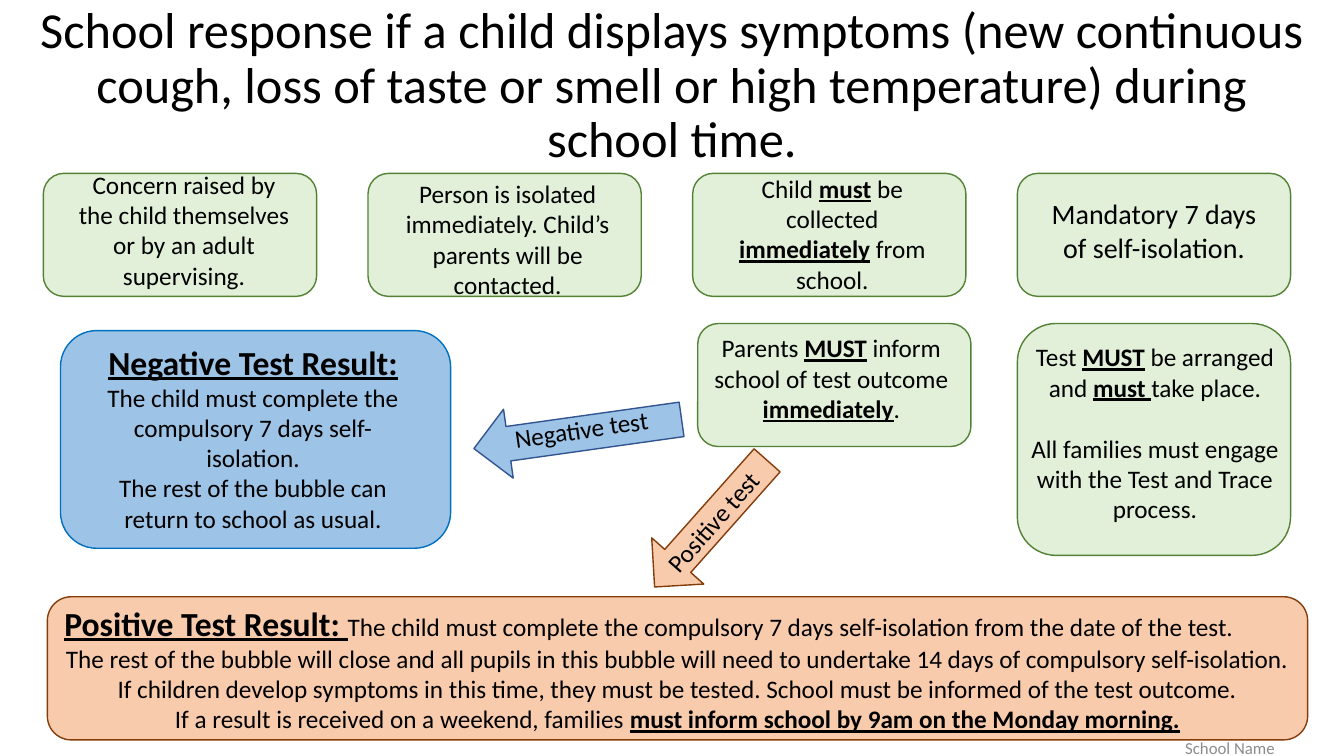
from pptx import Presentation
from pptx.dml.color import RGBColor
from pptx.enum import shapes as sh, text as tx
from pptx.util import Inches, Pt

BLACK = RGBColor(0, 0, 0)
GREY = RGBColor(0x8C, 0x8C, 0x8C)
MINT = RGBColor(0xE2, 0xF0, 0xD9)
GREEN = RGBColor(0x54, 0x82, 0x35)
SKY = RGBColor(0x9D, 0xC3, 0xE6)
BLUE = RGBColor(0x00, 0x70, 0xC0)
NAVY = RGBColor(0x32, 0x54, 0x91)
PEACH = RGBColor(0xF8, 0xCB, 0xAD)
BROWN = RGBColor(0x84, 0x3C, 0x0B)

ROUND = sh.MSO_SHAPE.ROUNDED_RECTANGLE
ARROW = sh.MSO_SHAPE.RIGHT_ARROW
LEFT, MID = tx.PP_ALIGN.LEFT, tx.PP_ALIGN.CENTER
COLS = [0.43 + 3.22 * i for i in range(4)]

STEPS = [
    (0.68, 1.63, 18, "Concern raised by the child themselves or by an adult supervising."),
    (3.89, 1.72, 18, "Person is isolated immediately. Child’s parents will be contacted."),
    (7.11, 1.67, 18, "Child *must* be collected *immediately* from school."),
    (10.3, 1.9, 20, "Mandatory 7 days of self-isolation."),
]


def add_shape(slide, kind, box, fill, line, turn=0):
    shape = slide.shapes.add_shape(kind, *map(Inches, box))
    shape.shadow.inherit = False
    shape.fill.solid()
    shape.fill.fore_color.rgb = fill
    shape.line.color.rgb = line
    shape.line.width = Pt(1)
    shape.rotation = turn
    return shape


def add_para(frame, words, size=18, align=MID, color=BLACK, first=False):
    para = frame.paragraphs[0] if first else frame.add_paragraph()
    para.alignment = align
    para.font.name = "Calibri"
    para.font.size = Pt(size)
    para.font.color.rgb = color
    for i, part in enumerate(words.split("*")):
        if part:
            run = para.add_run()
            run.text = part
            if i % 2:
                run.font.bold = run.font.underline = True
    return para


def add_text(slide, box, words, size=18, align=MID, color=BLACK,
             anchor=tx.MSO_ANCHOR.TOP, turn=0):
    label = slide.shapes.add_textbox(*map(Inches, box))
    label.rotation = turn
    frame = label.text_frame
    frame.word_wrap = True
    frame.vertical_anchor = anchor
    add_para(frame, words, size, align, color, True)
    return frame


def add_steps(slide):
    for col, (left, top, size, words) in zip(COLS, STEPS):
        add_shape(slide, ROUND, (col, 1.72, 2.71, 1.22), MINT, GREEN)
        add_text(slide, (left, top, 2.29, 1.31), words, size)


def add_tests(slide):
    add_shape(slide, ROUND, (COLS[3], 3.21, 2.71, 2.3), MINT, GREEN)
    frame = add_text(slide, (10.1, 3.34, 2.71, 1.92),
                     "Test *MUST* be arranged and *must *take place.")
    para = add_para(frame, "All families must engage with the Test and Trace process.")
    para.space_before = Pt(22)
    add_shape(slide, ROUND, (6.92, 3.21, 2.71, 1.22), MINT, GREEN)
    add_text(slide, (6.89, 3.25, 2.71, 1.01),
             "Parents *MUST* inform school of test outcome *immediately*.")


def add_arrows(slide):
    add_shape(slide, ARROW, (4.69, 3.96, 2.08, 0.69), SKY, NAVY, 172)
    add_text(slide, (5, 4.04, 1.76, 0.4), "Negative test", align=LEFT, turn=351.6)
    add_shape(slide, ARROW, (6.21, 4.85, 1.68, 0.69), PEACH, BROWN, 131.6)
    add_text(slide, (6.3, 4.85, 1.76, 0.4), "Positive test", align=LEFT, turn=311.5)


def add_results(slide):
    add_shape(slide, ROUND, (0.6, 3.28, 3.87, 2.16), SKY, BLUE)
    frame = add_text(slide, (0.81, 3.34, 3.4, 2.02), "*Negative Test Result:*", 24)
    add_para(frame, "The child must complete the compulsory 7 days self-isolation.")
    add_para(frame, "The rest of the bubble can return to school as usual.")

    panel = add_shape(slide, ROUND, (0.47, 5.92, 12.5, 1.42), PEACH, BROWN)
    frame = panel.text_frame
    frame.word_wrap = True
    frame.vertical_anchor = tx.MSO_ANCHOR.MIDDLE
    head = add_para(frame, "*Positive Test Result: *The child must complete the compulsory "
                    "7 days self-isolation from the date of the test.", align=LEFT, first=True)
    head.runs[0].font.size = Pt(24)
    add_para(frame, "The rest of the bubble will close and all pupils in this bubble will "
             "need to undertake 14 days of compulsory self-isolation. If children develop "
             "symptoms in this time, they must be tested. School must be informed of the "
             "test outcome.")
    add_para(frame, "If a result is received on a weekend, families "
             "*must inform school by 9am on the Monday morning.*")


def main():
    deck = Presentation()
    deck.slide_width, deck.slide_height = Inches(13.33), Inches(7.5)
    slide = deck.slides.add_slide(deck.slide_layouts[6])
    title = add_text(slide, (0.18, 0.08, 12.97, 1.64),
                     "School response if a child displays symptoms (new continuous cough, "
                     "loss of taste or smell or high temperature) during school time.",
                     36, anchor=tx.MSO_ANCHOR.BOTTOM)
    title.paragraphs[0].line_spacing = 0.9
    add_steps(slide)
    add_tests(slide)
    add_arrows(slide)
    add_results(slide)
    add_text(slide, (9.95, 7.22, 4.5, 0.4), "School Name", 12, color=GREY,
             anchor=tx.MSO_ANCHOR.MIDDLE)
    deck.save("out.pptx")


if __name__ == "__main__":
    main()
